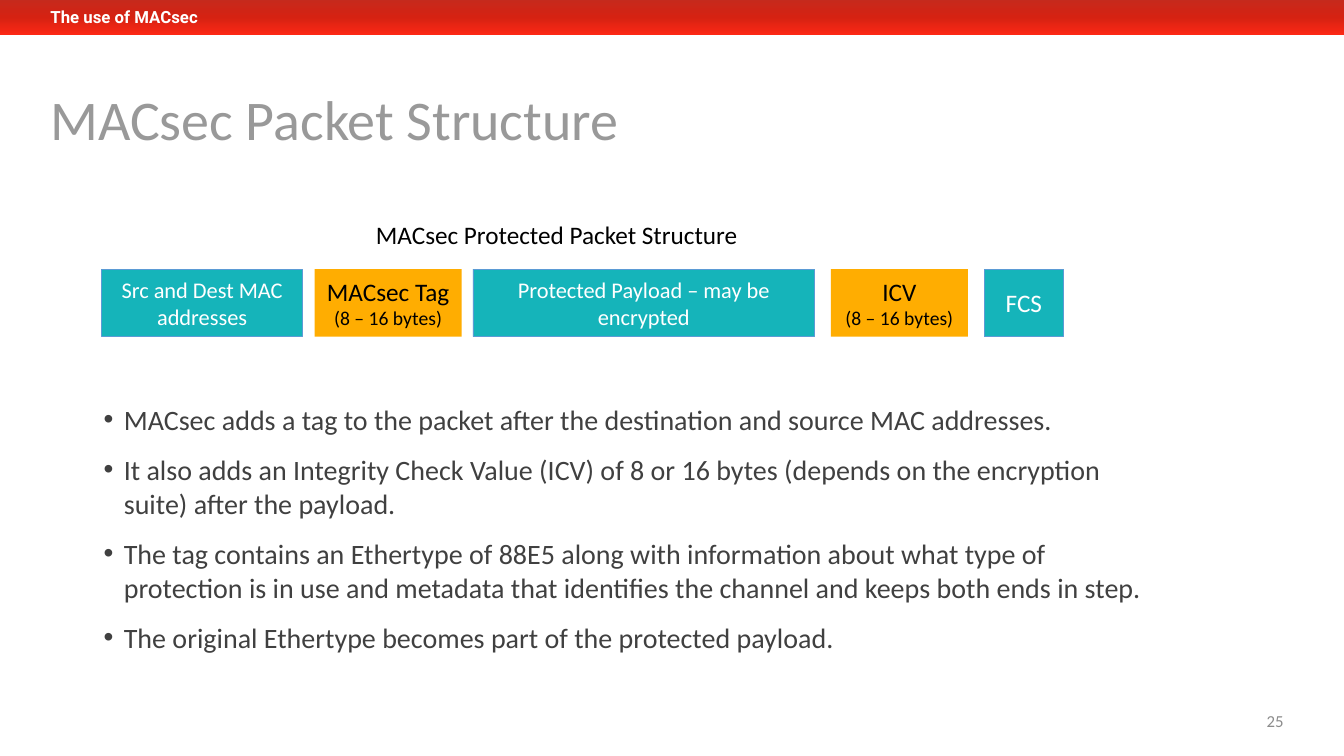
from copy import deepcopy

from lxml import etree
from pptx import Presentation
from pptx import util as u
from pptx.dml import color
from pptx.enum import shapes, text
from pptx.oxml import ns

TEAL, AMBER, EDGE = "15B4BA", "FFAD01", "5B9BD5"
WHITE, BLACK = "FFFFFF", "000000"
FIELDS = [
    (1.01, 1.99, TEAL, WHITE, [[("Src and Dest MAC addresses", 16)]]),
    (3.12, 1.46, AMBER, BLACK, [[("MACsec Tag ", 18), ("(8 – 16 bytes)", 14)]]),
    (4.69, 3.39, TEAL, WHITE, [[("Protected Payload – may be encrypted", 16)]]),
    (8.24, 1.36, AMBER, BLACK, [[("ICV", 18)], [("(8 – 16 bytes)", 14)]]),
    (9.76, 0.79, TEAL, WHITE, [[("FCS", 18)]]),
]
POINTS = [
    "MACsec adds a tag to the packet after the destination and source MAC addresses.",
    "It also adds an Integrity Check Value (ICV) of 8 or 16 bytes (depends on the "
    "encryption suite) after the payload.",
    "The tag contains an Ethertype of 88E5 along with information about what type of "
    "protection is in use and metadata that identifies the channel and keeps both ends in step.",
    "The original Ethertype becomes part of the protected payload.",
]


def rgb(value):
    """Turn a hex string into a colour."""
    return color.RGBColor.from_string(value)


def apply(obj, formats):
    """Set each attribute named in a dict of format values."""
    for name, value in formats.items():
        setattr(obj, name, value)


def add_run(p, words, size, hue, name="Calibri", bold=False):
    """Add a formatted run to a paragraph."""
    r = p.add_run()
    r.text = words
    apply(r.font, {"size": u.Pt(size), "name": name, "bold": bold})
    r.font.color.rgb = rgb(hue)


def add_rect(s, box):
    """Add a plain rectangle without shadow or outline."""
    sp = s.shapes.add_shape(shapes.MSO_SHAPE.RECTANGLE, *map(u.Inches, box))
    sp.shadow.inherit = False
    sp.line.fill.background()
    return sp


def add_label(s, box, words, size, hue, frame=None, para=None, **font):
    """Add a one-paragraph text box."""
    tf = s.shapes.add_textbox(*map(u.Inches, box)).text_frame
    apply(tf, {"word_wrap": True, **(frame or {})})
    p = tf.paragraphs[0]
    apply(p, para or {})
    add_run(p, words, size, hue, **font)


def add_banner(s, box):
    """Draw the red gradient band with the section name."""
    left, top, width, height = box
    fill = add_rect(s, box).fill
    fill.gradient()
    fill.gradient_angle = 270
    first, last = fill.gradient_stops
    first.color.rgb, last.color.rgb = rgb("C52A1D"), rgb("FD2815")
    first.position, last.position = 0, 1
    stops = fill._fill._gradFill.find(ns.qn("a:gsLst"))
    stops.insert(1, deepcopy(stops[0]))
    middle = fill.gradient_stops[1]
    middle.color.rgb, middle.position = rgb("D52212"), 0.5
    add_label(s, (left + 0.5, top + 0.03, 3.92, 0.3), "The use of MACsec", 12, WHITE,
              {"margin_left": 0}, name="Roboto", bold=True)


def add_packet(s, box):
    """Draw the packet caption and its row of fields."""
    left, top, width, height = box
    add_label(s, (left + 2.62, top, 3.83, 0.4), "MACsec Protected Packet Structure",
              18, BLACK, {"word_wrap": False})
    for x, field_width, fill, hue, paragraphs in FIELDS:
        sp = add_rect(s, (x, top + height - 0.67, field_width, 0.67))
        sp.fill.solid()
        sp.fill.fore_color.rgb = rgb(fill)
        if fill == TEAL:
            sp.line.color.rgb = rgb(EDGE)
            sp.line.width = u.Pt(0.5)
        tf = sp.text_frame
        apply(tf, {"word_wrap": True, "vertical_anchor": text.MSO_ANCHOR.MIDDLE})
        for i, runs in enumerate(paragraphs):
            p = tf.add_paragraph() if i else tf.paragraphs[0]
            p.alignment = text.PP_ALIGN.CENTER
            for words, size in runs:
                add_run(p, words, size, hue)


def add_points(s, box):
    """Write the bulleted explanation."""
    tf = s.shapes.add_textbox(*map(u.Inches, box)).text_frame
    tf.word_wrap = True
    for i, words in enumerate(POINTS):
        p = tf.add_paragraph() if i else tf.paragraphs[0]
        props = p._p.get_or_add_pPr()
        props.set("marL", str(u.Inches(0.2)))
        props.set("indent", str(u.Inches(-0.2)))
        etree.SubElement(props, ns.qn("a:buFont"), typeface="Arial")
        etree.SubElement(props, ns.qn("a:buChar"), char="•")
        p.space_before = u.Pt(12 if i else 0)
        add_run(p, words, 20, "404040")


def build_slide(prs):
    """Place every region of the packet structure slide."""
    s = prs.slides.add_slide(prs.slide_layouts[6])
    middle = {"vertical_anchor": text.MSO_ANCHOR.MIDDLE}
    flush = dict.fromkeys(("margin_left", "margin_top", "margin_right", "margin_bottom"), 0)
    add_banner(s, (0, -0.01, 13.34, 0.36))
    add_label(s, (0.5, 0.91, 9.73, 0.61), "MACsec Packet Structure", 40, "999999",
              {**middle, **flush}, {"line_spacing": 0.9})
    add_packet(s, (1.01, 2.13, 9.54, 1.21))
    add_points(s, (0.93, 3.94, 10.6, 2.63))
    add_label(s, (9.83, 6.95, 3, 0.4), "25", 12, "8C8C8C", middle,
              {"alignment": text.PP_ALIGN.RIGHT})


def main():
    """Create the presentation and save it."""
    prs = Presentation()
    apply(prs, {"slide_width": u.Inches(13.33), "slide_height": u.Inches(7.5)})
    build_slide(prs)
    prs.save("out.pptx")


if __name__ == "__main__":
    main()
